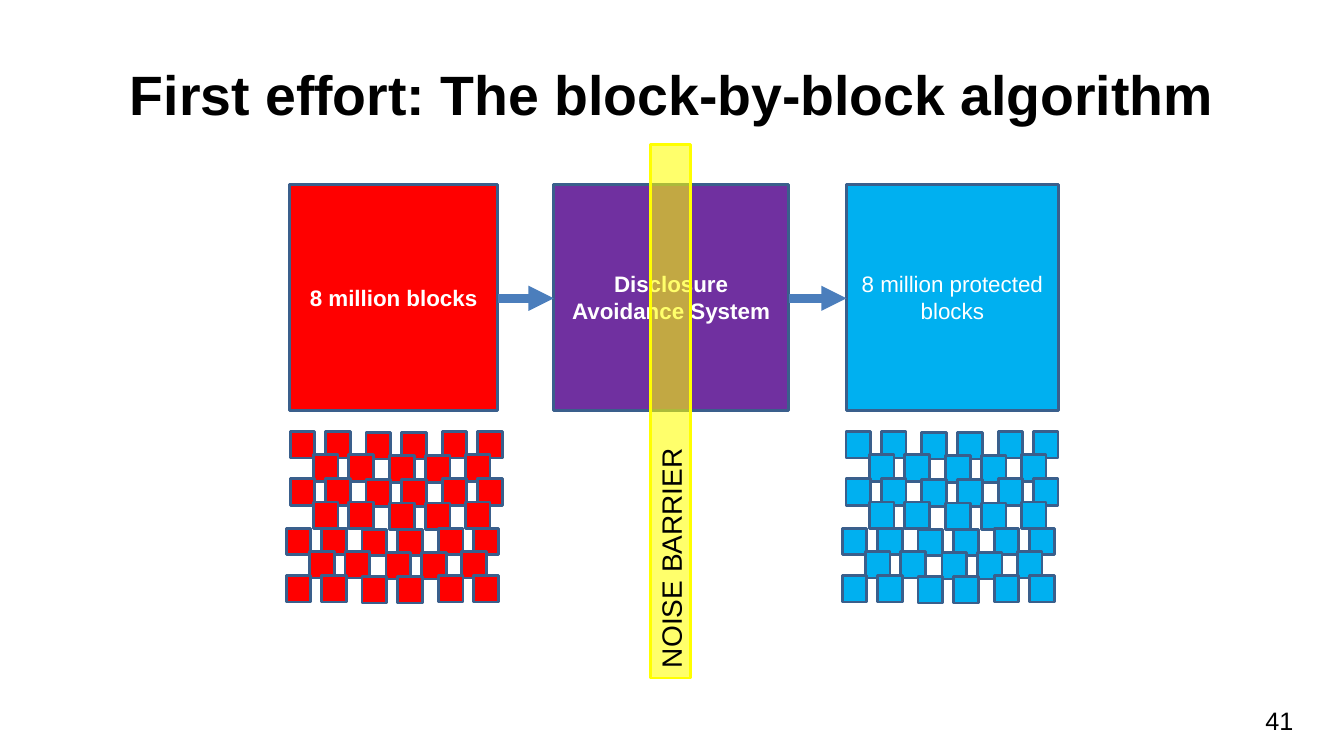
from dataclasses import dataclass

from lxml import etree
from pptx import Presentation
from pptx import util as u
from pptx.dml import color
from pptx.enum import shapes, text
from pptx.oxml import ns

FONT = "Arial"
RED, BLUE, PURPLE, YELLOW = "FF0000", "00B0F0", "7030A0", "FFFF00"
OUTLINE, ARROW, WHITE, BLACK = "3A5F8C", "4B7EBC", "FFFFFF", "000000"

STAGE_TOP, STAGE_HEIGHT = 131.8, 161.3
ARROW_Y = 213.1
BLOCK_WIDTH, BLOCK_HEIGHT = 17.5, 19
LONG_ROW = (0, 25.4, 54.2, 79.8, 108.8, 134)
SHORT_ROW = (16.8, 42, 71.3, 96.8, 125.4)
ROW_TOPS = (308.2, 324.8, 342, 358.6, 377.3, 393.9, 411.1)
LOWERED_COLUMNS = (2, 3)
LOWERED_BY = 0.7
SHIFTED_FROM_ROW = 4
ROW_SHIFT = -2.8


@dataclass(frozen=True)
class Box:
    left: float
    top: float
    width: float
    height: float


@dataclass(frozen=True)
class Label:
    words: str
    size: float
    colour: str = BLACK
    bold: bool = False
    align: text.PP_ALIGN = text.PP_ALIGN.CENTER
    anchor: text.MSO_ANCHOR = text.MSO_ANCHOR.MIDDLE


@dataclass(frozen=True)
class Stage:
    left: float
    width: float
    fill: str
    label: Label


@dataclass(frozen=True)
class BlockField:
    left: float
    fill: str


STAGES = (
    Stage(206.9, 148.5, RED, Label("8 million blocks", 16, WHITE, True)),
    Stage(395.5, 167.8, PURPLE, Label("Disclosure Avoidance System", 16, WHITE, True)),
    Stage(604.7, 151.2, BLUE, Label("8 million protected blocks", 16, WHITE)),
)
BLOCK_FIELDS = (BlockField(207.2, RED), BlockField(604.3, BLUE))


def rgb(value: str) -> color.RGBColor:
    return color.RGBColor.from_string(value)


def write(shape, label: Label) -> None:
    frame = shape.text_frame
    frame.word_wrap = True
    frame.vertical_anchor = label.anchor
    frame.text = label.words
    paragraph = frame.paragraphs[0]
    paragraph.alignment = label.align
    font = paragraph.runs[0].font
    font.name = FONT
    font.size = u.Pt(label.size)
    font.bold = label.bold
    font.color.rgb = rgb(label.colour)


def place(box: Box) -> tuple:
    return u.Pt(box.left), u.Pt(box.top), u.Pt(box.width), u.Pt(box.height)


def add_text(slide, box: Box, label: Label) -> None:
    write(slide.shapes.add_textbox(*place(box)), label)


def add_rectangle(slide, box: Box, fill: str, line: str = OUTLINE):
    shape = slide.shapes.add_shape(shapes.MSO_SHAPE.RECTANGLE, *place(box))
    shape.shadow.inherit = False
    shape.fill.solid()
    shape.fill.fore_color.rgb = rgb(fill)
    shape.line.color.rgb = rgb(line)
    shape.line.width = u.Pt(2)
    return shape


def add_arrow(slide, start: float, end: float) -> None:
    arrow = slide.shapes.add_connector(
        shapes.MSO_CONNECTOR.STRAIGHT, u.Pt(start), u.Pt(ARROW_Y), u.Pt(end), u.Pt(ARROW_Y)
    )
    arrow.line.color.rgb = rgb(ARROW)
    arrow.line.width = u.Pt(6)
    etree.SubElement(arrow.line._get_or_add_ln(), ns.qn("a:tailEnd"), type="triangle")
    etree.SubElement(arrow._element.spPr, ns.qn("a:effectLst"))


def add_blocks(slide, field: BlockField) -> None:
    for row, top in enumerate(ROW_TOPS):
        offsets = SHORT_ROW if row % 2 else LONG_ROW
        left = field.left + (ROW_SHIFT if row >= SHIFTED_FROM_ROW else 0)
        for column, offset in enumerate(offsets):
            drop = LOWERED_BY if column in LOWERED_COLUMNS else 0
            box = Box(left + offset, top + drop, BLOCK_WIDTH, BLOCK_HEIGHT)
            add_rectangle(slide, box, field.fill)


def add_noise_barrier(slide) -> None:
    barrier = add_rectangle(slide, Box(288.7, 279.4, 380.9, 28.8), YELLOW, YELLOW)
    barrier.rotation = 270
    fill_colour = barrier._element.spPr.find(ns.qn("a:solidFill"))[0]
    etree.SubElement(fill_colour, ns.qn("a:alpha"), val="58000")
    write(barrier, Label("NOISE BARRIER", 20, align=text.PP_ALIGN.LEFT))


def main() -> None:
    presentation = Presentation()
    presentation.slide_width = u.Pt(960)
    presentation.slide_height = u.Pt(540)
    slide = presentation.slides.add_slide(presentation.slide_layouts[6])

    title = Label("First effort: The block-by-block algorithm", 39.6, bold=True)
    add_text(slide, Box(48, 21.6, 864, 90), title)
    for stage in STAGES:
        box = Box(stage.left, STAGE_TOP, stage.width, STAGE_HEIGHT)
        write(add_rectangle(slide, box, stage.fill), stage.label)
    for source, target in zip(STAGES, STAGES[1:]):
        add_arrow(slide, source.left + source.width, target.left)
    for field in BLOCK_FIELDS:
        add_blocks(slide, field)
    number = Label("41", 18, align=text.PP_ALIGN.RIGHT, anchor=text.MSO_ANCHOR.TOP)
    add_text(slide, Box(727.2, 500.4, 203.8, 28), number)
    add_noise_barrier(slide)

    presentation.save("out.pptx")


if __name__ == "__main__":
    main()
